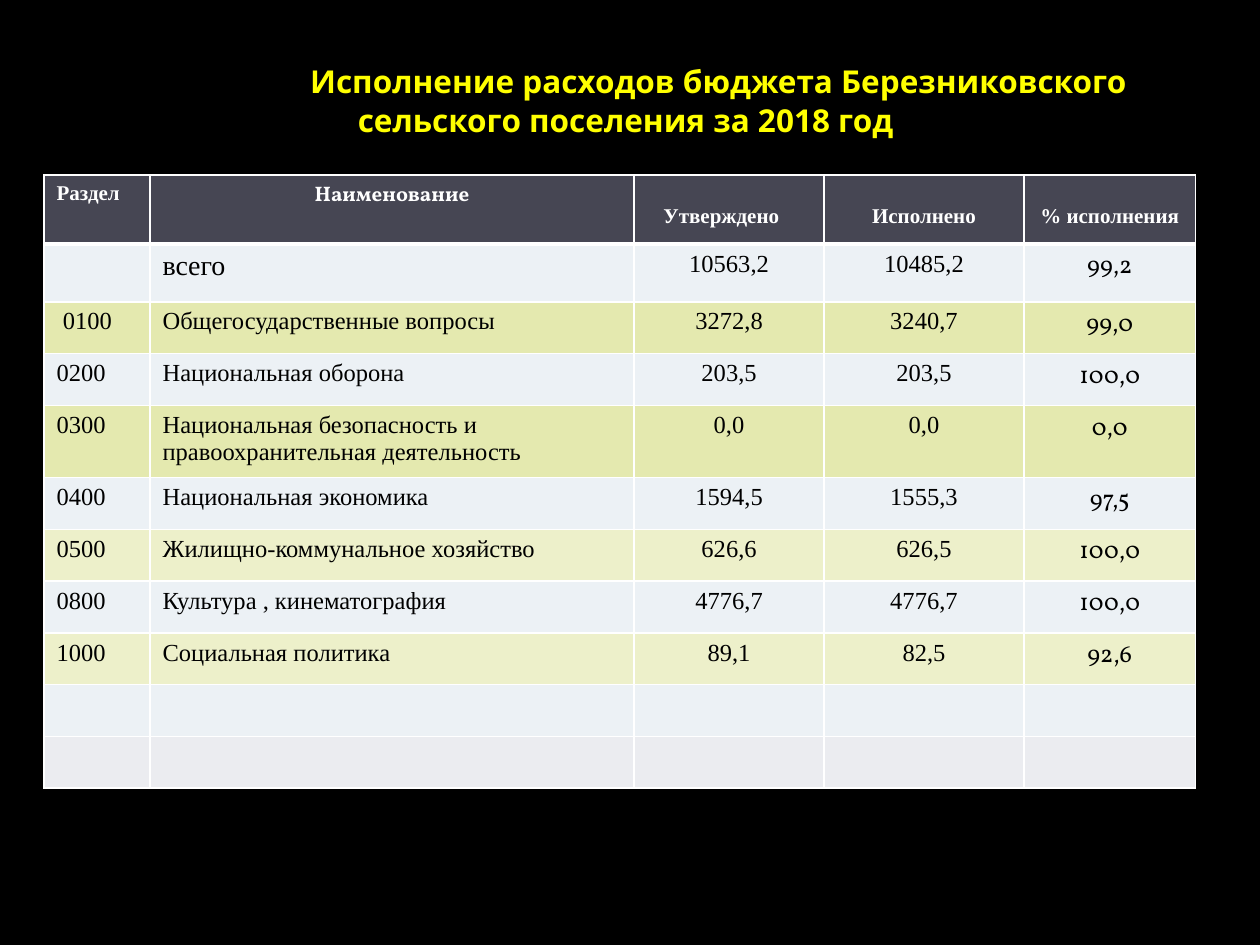
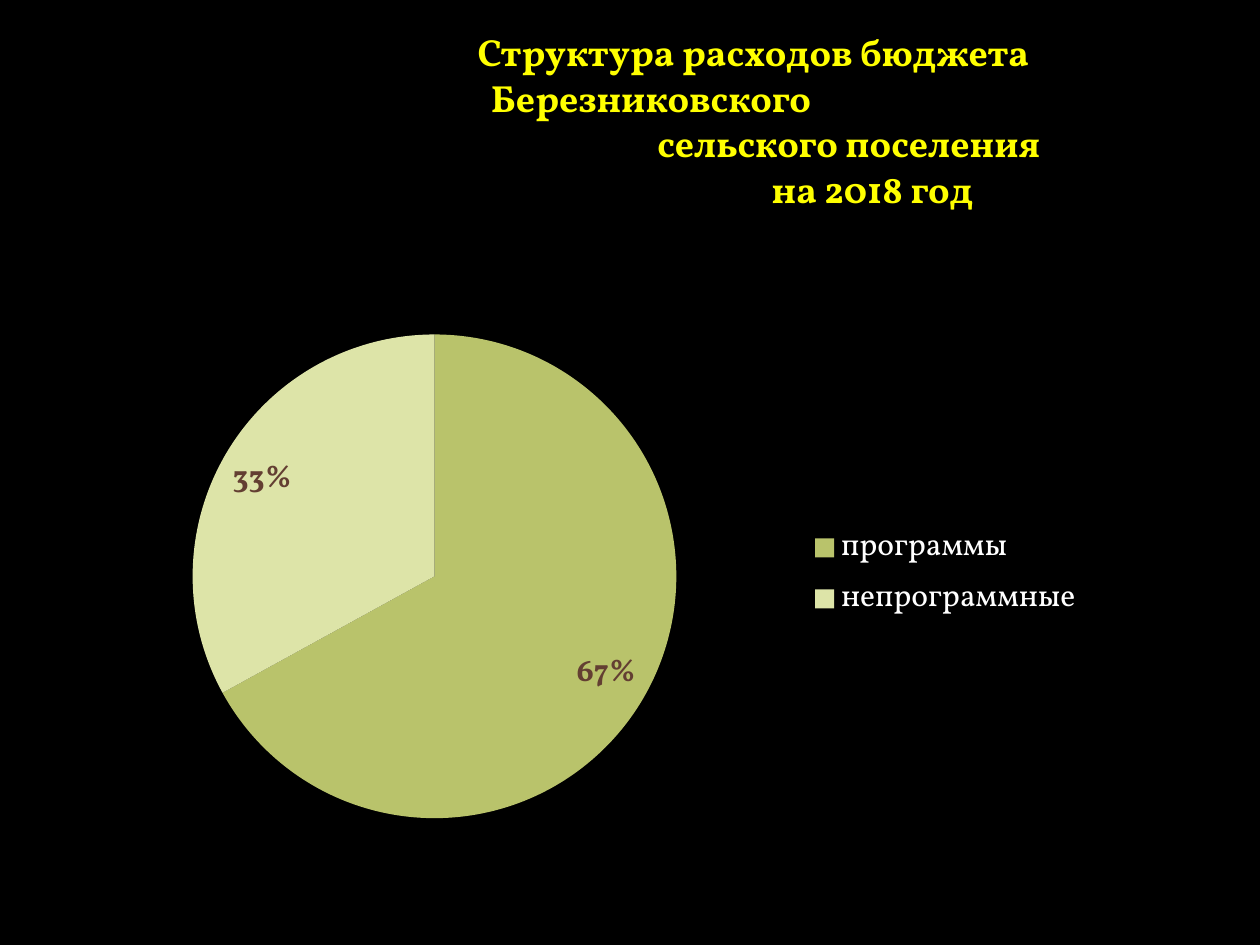
"""Build two budget slides: a spending table and a spending pie."""
from lxml.etree import fromstring
from pptx import Presentation
from pptx.chart.data import CategoryChartData as Data
from pptx.dml.color import RGBColor
from pptx.enum.chart import XL_CHART_TYPE as Kind
from pptx.enum.chart import XL_LABEL_POSITION as Spot
from pptx.enum.chart import XL_LEGEND_POSITION as Side
from pptx.enum.text import MSO_ANCHOR as Anchor
from pptx.enum.text import PP_ALIGN as Align
from pptx.util import Pt

SANS, TIMES, SERIF = "Noto Sans", "Times New Roman", "Vollkorn"
BLACK, WHITE, YELLOW = "000000", "FFFFFF", "FFFF00"
HEAD, PALE, LIME, CREAM, GREY = "464653", "ECF1F5", "E4E9AF", "EDF0CA", "EBECF0"
PIE, BROWN = ("B9C36B", "DDE4A8"), "633F32"
A = "http://schemas.openxmlformats.org/drawingml/2006/main"
C = "http://schemas.openxmlformats.org/drawingml/2006/chart"


def style(font, face, size, tint, bold=False):
    font.name, font.size, font.bold = face, Pt(size), bold
    font.color.rgb = RGBColor.from_string(tint)


def page(deck, box, lines, face, size, pitch):
    slide = deck.slides.add_slide(deck.slide_layouts[6])
    slide.background.fill.solid()
    slide.background.fill.fore_color.rgb = RGBColor.from_string(BLACK)
    frame = slide.shapes.add_textbox(*map(Pt, box)).text_frame
    frame.word_wrap = True
    frame.vertical_anchor = Anchor.MIDDLE
    frame.text = "\n".join(text for text, shift in lines)
    for para, (text, shift) in zip(frame.paragraphs, lines):
        para.alignment = Align.CENTER
        para.line_spacing = Pt(pitch)
        para._p.get_or_add_pPr().set("marL", str(Pt(shift)))
        style(para.runs[0].font, face, size, YELLOW, True)
    return slide


deck = Presentation()
deck.slide_width, deck.slide_height = Pt(720), Pt(540)

slide = page(deck, (20, 43, 675, 28), [
    ("Исполнение расходов бюджета Березниковского", 106),
    ("сельского поселения за 2018 год", 0),
], SANS, 18, 22.3)

rows = [
    (HEAD, 39.5, "Раздел", "Наименование", "Утверждено", "Исполнено", "% исполнения"),
    (PALE, 33, "", "всего", "10563,2", "10485,2", "99,2"),
    (LIME, 29.6, " 0100", "Общегосударственные вопросы", "3272,8", "3240,7", "99,0"),
    (PALE, 29.6, "0200", "Национальная оборона", "203,5", "203,5", "100,0"),
    (LIME, 41.2, "0300", "Национальная безопасность и правоохранительная деятельность",
     "0,0", "0,0", "0,0"),
    (PALE, 29.6, "0400", "Национальная экономика", "1594,5", "1555,3", "97,5"),
    (CREAM, 29.6, "0500", "Жилищно-коммунальное хозяйство", "626,6", "626,5", "100,0"),
    (PALE, 29.6, "0800", "Культура , кинематография", "4776,7", "4776,7", "100,0"),
    (CREAM, 29.6, "1000", "Социальная политика", "89,1", "82,5", "92,6"),
    (PALE, 29.6, "", "", "", "", ""),
    (GREY, 29.6, "", "", "", "", ""),
]
wide = [60.5, 276.7, 108.5, 114.3, 98]
table = slide.shapes.add_table(len(rows), len(wide), Pt(25.2), Pt(100), Pt(sum(wide)),
                               Pt(sum(row[1] for row in rows))).table
for col, width in zip(table.columns, wide):
    col.width = Pt(width)
for r, (tint, high, *texts) in enumerate(rows):
    table.rows[r].height = Pt(high)
    for c, text in enumerate(texts):
        cell = table.cell(r, c)
        props = cell._tc.get_or_add_tcPr()
        for edge in "LRTB":
            thick = 3 if (r, edge) in ((0, "B"), (1, "T")) else 1
            props.append(fromstring(
                f'<a:ln{edge} xmlns:a="{A}" w="{Pt(thick)}"><a:solidFill>'
                f'<a:srgbClr val="{WHITE}"/></a:solidFill></a:ln{edge}>'))
        cell.fill.solid()
        cell.fill.fore_color.rgb = RGBColor.from_string(tint)
        cell.text = text
        para = cell.text_frame.paragraphs[0]
        if c > 1 or (r, c) == (0, 1):
            para.alignment = Align.CENTER
        face = SERIF if (r, c) == (0, 1) or (r and c == 4) else TIMES
        size = 12 if r == 0 else 16 if text == "всего" else 14
        style(para.font, face, size, BLACK if r else WHITE, r == 0)
        for run in para.runs:
            style(run.font, face, size, BLACK if r else WHITE, r == 0)
        if r == 0 and c > 1:
            cell.vertical_anchor = Anchor.BOTTOM
            cell.margin_bottom = Pt(9)
table.cell(0, 2).margin_right = Pt(16)

slide = page(deck, (60, 31.7, 624, 73.4), [
    ("Структура расходов бюджета", 117),
    ("Березниковского", 0),
    ("сельского поселения", 226),
    ("на 2018 год", 253),
], SERIF, 21.6, 26)

data = Data(number_format="0%")
data.categories = ["программы", "непрограммные"]
data.add_series("Series 1", (0.67, 0.33))
chart = slide.shapes.add_chart(Kind.PIE, Pt(31), Pt(157), Pt(595.4), Pt(341.3), data).chart
style(chart.font, SERIF, 18, WHITE)
chart.has_title = False
chart.has_legend = True
chart.legend.position = Side.RIGHT
chart.legend.include_in_layout = False
style(chart.legend.font, SERIF, 18, WHITE)

plot = chart.plots[0]
plot.vary_by_categories = True
plot.has_data_labels = True
labels = plot.data_labels
labels.show_value, labels.show_percentage = True, False
labels.number_format, labels.number_format_is_linked = "0%", False
labels.position = Spot.INSIDE_END
style(labels.font, SERIF, 18, BROWN, True)
for i, tint in enumerate(PIE):
    look = plot.series[0].points[i].format
    look.fill.solid()
    look.fill.fore_color.rgb = RGBColor.from_string(tint)
    look.line.fill.background()

area = chart._chartSpace.find(f".//{{{C}}}plotArea")
for old in area.findall(f"{{{C}}}layout"):
    area.remove(old)
marks = [("layoutTarget", "inner"), ("xMode", "edge"), ("yMode", "edge"),
         ("x", 0.13), ("y", 0.1), ("w", 0.47), ("h", 0.81)]
inner = "".join(f'<c:{tag} val="{val}"/>' for tag, val in marks)
area.insert(0, fromstring(
    f'<c:layout xmlns:c="{C}"><c:manualLayout>{inner}</c:manualLayout></c:layout>'))

deck.save("out.pptx")
